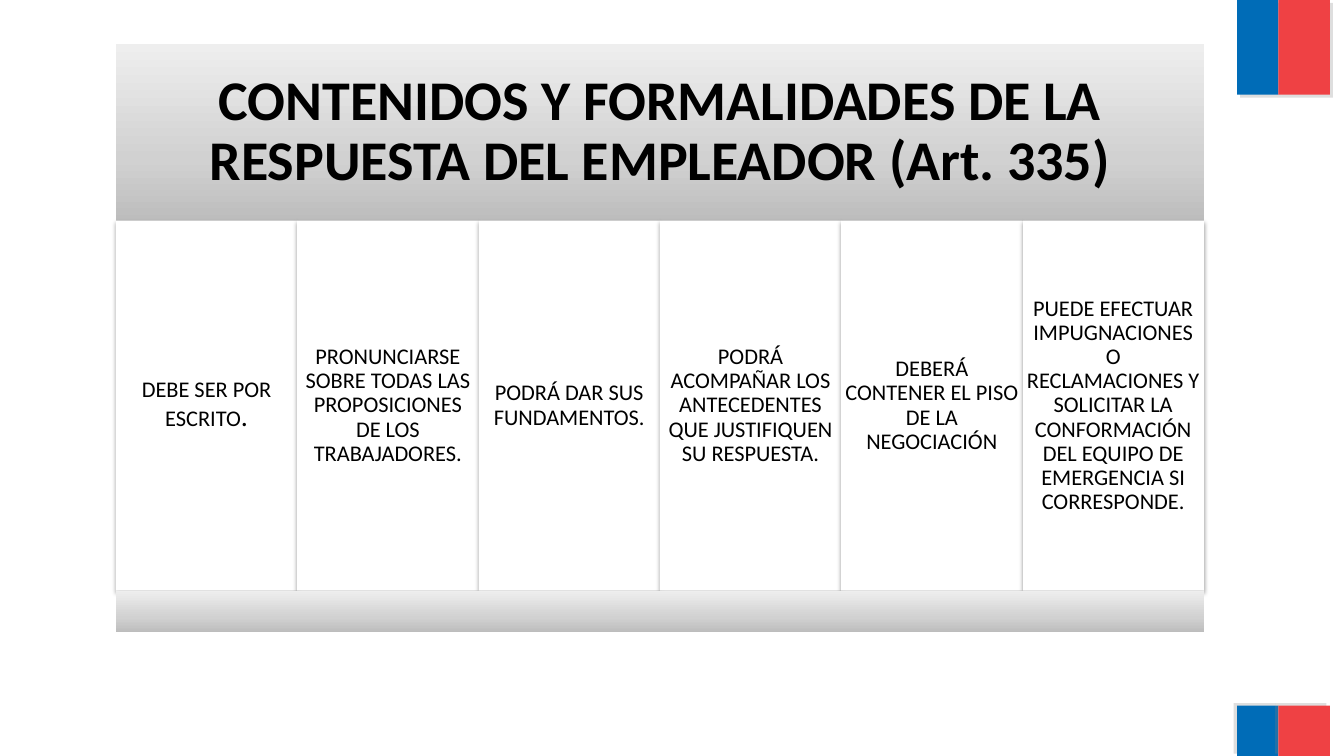
from copy import deepcopy
from dataclasses import dataclass

from pptx import Presentation
from pptx.dml.color import RGBColor
from pptx.enum.shapes import MSO_SHAPE
from pptx.enum.text import MSO_ANCHOR, MSO_AUTO_SIZE, PP_ALIGN
from pptx.oxml import parse_xml
from pptx.oxml.ns import nsdecls, qn
from pptx.shapes.autoshape import Shape
from pptx.slide import Slide
from pptx.util import Inches, Pt

RECT = MSO_SHAPE.RECTANGLE
CENTER = PP_ALIGN.CENTER
MIDDLE = MSO_ANCHOR.MIDDLE
NO_FIT = MSO_AUTO_SIZE.NONE

FONT = "Calibri"
BLACK, WHITE = "000000", "FFFFFF"
BLUE, RED = "006CB7", "EF4144"
GREYS = ((0, "BDBDBD"), (0.35, "D1D1D1"), (1, "EEEEEE"))

LEFT, WIDTH = 1.15, 10.79
HEAD_TOP, HEAD_HIGH = 0.44, 1.75
CELL_TOP, CELL_HIGH = 2.19, 3.67
FOOT_TOP, FOOT_HIGH = 5.86, 0.41

TITLE = "CONTENIDOS Y FORMALIDADES DE LA RESPUESTA DEL EMPLEADOR (Art. 335)"


@dataclass(frozen=True)
class Shadow:
    color: str
    alpha: int
    blur: float
    dist: float
    angle: int


@dataclass(frozen=True)
class Band:
    top: float
    high: float
    shadow: Shadow


@dataclass(frozen=True)
class Cell:
    text: str
    end: str = ""


BANDS = (
    Band(0, 0.94, Shadow("808080", 25, 0, 3, 45)),
    Band(7, 0.5, Shadow("808080", 25, 0, 3, 215)),
)
STRIPES = ((12.27, 0.41, BLUE), (12.68, 0.51, RED))
CELL_SHADOW = Shadow(BLACK, 35, 3.1, 1.8, 90)
CELLS = (
    Cell("DEBE SER POR ESCRITO", "."),
    Cell("PRONUNCIARSE SOBRE TODAS LAS PROPOSICIONES DE LOS TRABAJADORES."),
    Cell("PODRÁ DAR SUS FUNDAMENTOS."),
    Cell("PODRÁ ACOMPAÑAR LOS ANTECEDENTES QUE JUSTIFIQUEN SU RESPUESTA."),
    Cell("DEBERÁ CONTENER EL PISO DE LA NEGOCIACIÓN"),
    Cell("PUEDE EFECTUAR IMPUGNACIONES O RECLAMACIONES Y SOLICITAR LA "
         "CONFORMACIÓN DEL EQUIPO DE EMERGENCIA SI CORRESPONDE."),
)


def rgb(code: str) -> RGBColor:
    return RGBColor.from_string(code)


def add_box(slide: Slide, left: float, top: float, wide: float, high: float) -> Shape:
    box = slide.shapes.add_shape(
        RECT, Inches(left), Inches(top), Inches(wide), Inches(high))
    box.shadow.inherit = False
    box.line.fill.background()
    return box


def fill_flat(box: Shape, color: str) -> None:
    box.fill.solid()
    box.fill.fore_color.rgb = rgb(color)


def fill_grey(box: Shape) -> None:
    """Fill with the three greys, dark at the bottom."""
    box.fill.gradient()
    box.fill.gradient_angle = 90
    first = box._element.spPr.find(".//" + qn("a:gs"))
    first.addnext(deepcopy(first))
    for stop, (place, color) in zip(box.fill.gradient_stops, GREYS):
        stop.position = place
        stop.color.rgb = rgb(color)


def cast(box: Shape, shadow: Shadow) -> None:
    """Put an outer shadow in the empty effect list of the box."""
    effects = box._element.spPr.find(qn("a:effectLst"))
    effects.append(parse_xml(
        f'<a:outerShdw {nsdecls("a")} blurRad="{Pt(shadow.blur)}" '
        f'dist="{Pt(shadow.dist)}" dir="{shadow.angle * 60000}" '
        f'algn="ctr" rotWithShape="0"><a:srgbClr val="{shadow.color}">'
        f'<a:alpha val="{shadow.alpha * 1000}"/></a:srgbClr></a:outerShdw>'))


def set_text(box: Shape, text: str, size: int, inset: float, bold: bool = False) -> None:
    frame = box.text_frame
    frame.text = text
    frame.word_wrap = True
    frame.auto_size = NO_FIT
    frame.vertical_anchor = MIDDLE
    frame.margin_left = frame.margin_right = Inches(inset)
    frame.margin_top = frame.margin_bottom = Inches(inset)
    para = frame.paragraphs[0]
    para.alignment = CENTER
    para.line_spacing = 0.9
    para.font.name = FONT
    para.font.size = Pt(size)
    para.font.bold = bold
    para.font.color.rgb = rgb(BLACK)


def add_flags(slide: Slide) -> None:
    for band in BANDS:
        for left, wide, color in STRIPES:
            box = add_box(slide, left, band.top, wide, band.high)
            fill_flat(box, color)
            cast(box, band.shadow)


def add_title(slide: Slide) -> None:
    title = slide.shapes.title
    title.left, title.top = Inches(LEFT), Inches(HEAD_TOP)
    title.width, title.height = Inches(WIDTH), Inches(HEAD_HIGH)
    fill_grey(title)
    set_text(title, TITLE, 40, 0.11, bold=True)


def add_cells(slide: Slide) -> None:
    wide = WIDTH / len(CELLS)
    for i, cell in enumerate(CELLS):
        box = add_box(slide, LEFT + i * wide, CELL_TOP, wide, CELL_HIGH)
        fill_flat(box, WHITE)
        cast(box, CELL_SHADOW)
        set_text(box, cell.text, 16, 0.04)
        if cell.end:
            run = box.text_frame.paragraphs[0].add_run()
            run.text = cell.end
            run.font.size = Pt(20)


def main() -> None:
    deck = Presentation()
    deck.slide_width, deck.slide_height = Inches(13.33), Inches(7.5)
    slide = deck.slides.add_slide(deck.slide_layouts.get_by_name("Title Only"))
    add_flags(slide)
    add_title(slide)
    add_cells(slide)
    fill_grey(add_box(slide, LEFT, FOOT_TOP, WIDTH, FOOT_HIGH))
    deck.save("out.pptx")


if __name__ == "__main__":
    main()
